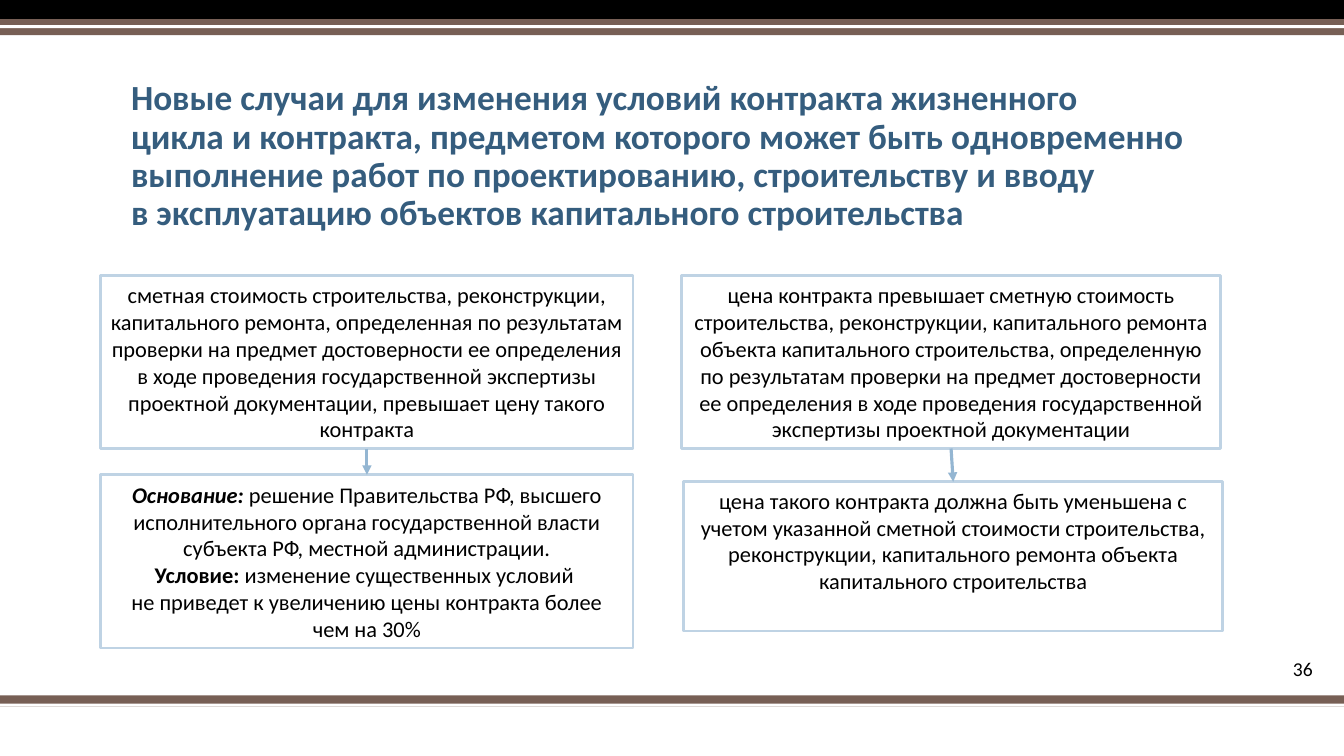
"""Build the slide on new cases for changing life-cycle contract terms."""
from lxml.etree import SubElement
from pptx import Presentation
from pptx.dml.color import RGBColor
from pptx.enum.shapes import MSO_CONNECTOR, MSO_SHAPE
from pptx.enum.text import MSO_ANCHOR, MSO_AUTO_SIZE, PP_ALIGN
from pptx.oxml.ns import qn
from pptx.util import Inches, Pt


def color(hex_value):
    return RGBColor.from_string(hex_value)


def area(left, top, width, height):
    """Turn percentages of the slide into a position and size."""
    return [int(share * side / 100) for share, side in zip(
        (left, top, width, height), (deck.slide_width, deck.slide_height) * 2)]


deck = Presentation()
deck.slide_width, deck.slide_height = Inches(13.33), Inches(7.5)
slide = deck.slides.add_slide(deck.slide_layouts[5])

BROWN, WHITE, BLACK = "775F55", "FFFFFF", "000000"
bands = [(92, 1.47, BROWN), (93.07, 0.4, WHITE),
         (0, 2.53, BLACK), (2.53, 2.13, BROWN), (3.33, 0.4, WHITE)]
for top, height, fill in bands:
    band = slide.shapes.add_shape(MSO_SHAPE.RECTANGLE, *area(0, top, 100, height))
    band.shadow.inherit = False
    band.fill.solid()
    band.fill.fore_color.rgb = color(fill)
    band.line.fill.background()

heading = slide.shapes.title
heading.left, heading.top, heading.width, heading.height = area(9, 15.6, 83.4, 15.87)
heading_format = {"word_wrap": True, "auto_size": MSO_AUTO_SIZE.NONE,
                  "vertical_anchor": MSO_ANCHOR.BOTTOM}
for attribute, value in heading_format.items():
    setattr(heading.text_frame, attribute, value)
heading_line = heading.text_frame.paragraphs[0]
heading_line.text = (
    "Новые случаи для изменения условий контракта жизненного \v"
    "цикла и контракта, предметом которого может быть одновременно "
    "выполнение работ по проектированию, строительству и вводу \v"
    "в эксплуатацию объектов капитального строительства")
heading_line.alignment = PP_ALIGN.LEFT
heading_line.line_spacing = 0.9
for run in heading_line.runs:
    for attribute, value in {"name": "Calibri", "size": Pt(25.2), "bold": True}.items():
        setattr(run.font, attribute, value)
    run.font.color.rgb = color("355D7E")

page_number = slide.shapes.add_textbox(*area(90.77, 86.8, 7.65, 3.33))
page_number.text_frame.word_wrap = True
page_number.text_frame.vertical_anchor = MSO_ANCHOR.MIDDLE
number_line = page_number.text_frame.paragraphs[0]
number_line.alignment = PP_ALIGN.RIGHT
number_run = number_line.add_run()
number_run.text = "36"
for attribute, value in {"name": "Calibri", "size": Pt(14)}.items():
    setattr(number_run.font, attribute, value)
number_run.font.color.rgb = color(BLACK)

PLAIN = {"name": "Calibri", "size": Pt(16), "bold": False, "italic": False}
BOLD = {**PLAIN, "bold": True}
BOLD_ITALIC = {**BOLD, "italic": True}
cases = [
    [((7.5, 36.4, 39.6, 22.93), MSO_ANCHOR.MIDDLE, [[
        ("сметная стоимость строительства, реконструкции, капитального ремонта, "
         "определенная по результатам проверки на предмет достоверности ее определения "
         "в ходе проведения государственной экспертизы проектной документации, "
         "превышает цену такого контракта", PLAIN)]]),
     ((7.5, 62.8, 39.6, 22.93), MSO_ANCHOR.MIDDLE, [
        [("Основание:", BOLD_ITALIC),
         (" решение Правительства РФ, высшего исполнительного органа государственной "
          "власти субъекта РФ, местной администрации.", PLAIN)],
        [("Условие:", BOLD),
         (" изменение существенных условий \n"
          "не приведет к увеличению цены контракта более чем на 30%", PLAIN)]])],
    [((50.7, 36.4, 40.13, 22.93), MSO_ANCHOR.MIDDLE, [[
        ("цена контракта превышает сметную стоимость строительства, реконструкции, "
         "капитального ремонта объекта капитального строительства, определенную "
         "по результатам проверки на предмет достоверности ее определения в ходе "
         "проведения государственной экспертизы проектной документации", PLAIN)]]),
     ((50.86, 63.73, 40.13, 19.73), MSO_ANCHOR.TOP, [[
        ("цена такого контракта должна быть уменьшена с учетом указанной сметной "
         "стоимости строительства, реконструкции, капитального ремонта объекта "
         "капитального строительства", PLAIN)]])],
]
for case in cases:
    steps = []
    for place, anchor, paragraphs in case:
        step = slide.shapes.add_shape(MSO_SHAPE.RECTANGLE, *area(*place))
        step.shadow.inherit = False
        step.fill.background()
        step.line.color.rgb = color("BFD3E4")
        step.line.width = Pt(2)
        frame = step.text_frame
        frame.word_wrap = True
        frame.vertical_anchor = anchor
        for index, pieces in enumerate(paragraphs):
            paragraph = frame.add_paragraph() if index else frame.paragraphs[0]
            paragraph.alignment = PP_ALIGN.CENTER
            for text, font_format in pieces:
                for part, words in enumerate(text.split("\n")):
                    if part:
                        paragraph.add_line_break()
                    run = paragraph.add_run()
                    run.text = words
                    for attribute, value in font_format.items():
                        setattr(run.font, attribute, value)
                    run.font.color.rgb = color(BLACK)
        steps.append(step)

    condition, outcome = steps
    arrow = slide.shapes.add_connector(MSO_CONNECTOR.STRAIGHT, 0, 0, 0, 0)
    arrow.begin_connect(condition, 2)
    arrow.end_connect(outcome, 0)
    arrow.line.color.rgb = color("94B6D2")
    arrow.line.width = Pt(2.25)
    SubElement(arrow.line._get_or_add_ln(), qn("a:tailEnd"), type="triangle")
    SubElement(arrow._element.spPr, qn("a:effectLst"))

deck.save("out.pptx")
